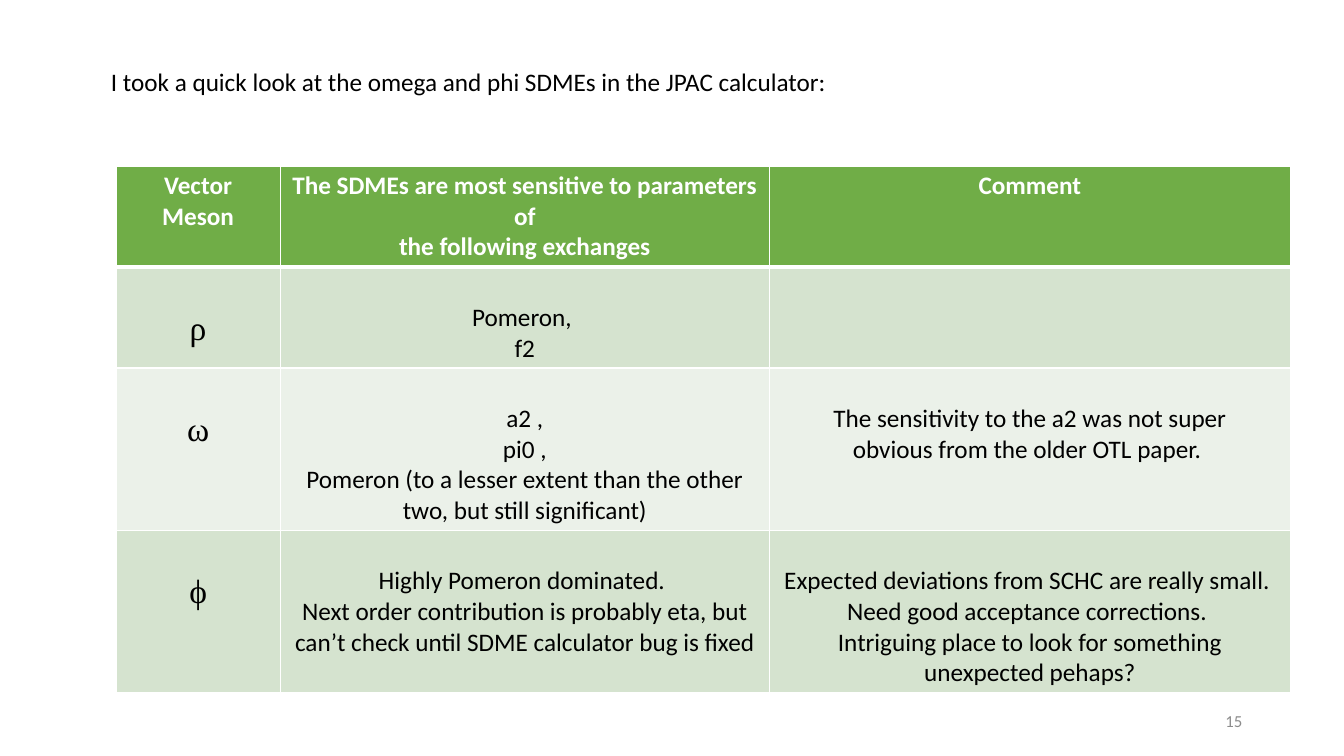
import pptx
import pptx.util
import pptx.dml.color
import pptx.enum.text
import pptx.oxml
import pptx.oxml.ns
import lxml.etree

INCH = pptx.util.Inches
ALIGN = pptx.enum.text.PP_ALIGN
ANCHOR = pptx.enum.text.MSO_ANCHOR

COLOURS = {
    "header": "70AD47",
    "band_dark": "D5E3CF",
    "band_light": "EBF1E9",
    "rule": "FFFFFF",
    "header_text": "FFFFFF",
    "text": "000000",
    "page_number": "8C8C8C",
}
BODY_FONT, SYMBOL_FONT = "Calibri", "Times New Roman"

COLUMN_WIDTHS = [1.63, 4.85, 5.17]
ROW_HEIGHTS = [1.0, 1.0, 1.6, 1.6]
CELL_PAD = 0.04
BODY_DROP, SYMBOL_DROP = 0.35, 0.43  # space above the text of body rows

HEADINGS = [
    "Vector Meson",
    "The SDMEs are most sensitive to parameters of\nthe following exchanges",
    "Comment",
]
MESONS = [
    ["ρ", "Pomeron, \nf2", ""],
    ["ω",
     "a2 ,\npi0 ,\nPomeron (to a lesser extent than the other two, "
     "but still significant)",
     " The sensitivity to the a2 was not super \n"
     "obvious from the older OTL paper. "],
    ["ϕ",
     "Highly Pomeron dominated. \nNext order contribution is probably eta, "
     "but can’t check until SDME calculator bug is fixed",
     "Expected deviations from SCHC are really small. \n"
     "Need good acceptance corrections. \n"
     "Intriguing place to look for something unexpected pehaps?"],
]


def rgb(name):
    return pptx.dml.color.RGBColor.from_string(COLOURS[name])


def write(frame, text, size=18, font=BODY_FONT, colour="text", bold=False,
          align=ALIGN.LEFT):
    """Fill a text frame, one paragraph per line of text."""
    for index, line in enumerate(text.split("\n")):
        paragraph = frame.paragraphs[0] if index == 0 else frame.add_paragraph()
        paragraph.alignment = align
        run = paragraph.add_run()
        run.text = line
        run.font.size = pptx.util.Pt(size)
        run.font.name = font
        run.font.bold = bold
        run.font.color.rgb = rgb(colour)


def rule_cell(cell, widths):
    """Draw the cell borders; widths maps a side tag to points."""
    properties = cell._tc.get_or_add_tcPr()
    for index, (side, width) in enumerate(widths.items()):
        border = lxml.etree.Element(
            pptx.oxml.ns.qn("a:" + side), w=str(pptx.util.Pt(width)))
        fill = lxml.etree.SubElement(border, pptx.oxml.ns.qn("a:solidFill"))
        lxml.etree.SubElement(
            fill, pptx.oxml.ns.qn("a:srgbClr"), val=COLOURS["rule"])
        properties.insert(index, border)


def add_lead_sentence(slide, left, top, width, height):
    lead = slide.shapes.title
    lead.left, lead.top = INCH(left), INCH(top)
    lead.width, lead.height = INCH(width), INCH(height)
    frame = lead.text_frame
    frame.auto_size = pptx.enum.text.MSO_AUTO_SIZE.NONE
    frame.word_wrap = False
    frame.vertical_anchor = ANCHOR.TOP
    write(frame, "I took a quick look at the omega and phi SDMEs "
                 "in the JPAC calculator:")


def add_meson_table(slide, left, top):
    rows = [HEADINGS] + MESONS
    table = slide.shapes.add_table(
        len(rows), len(HEADINGS), INCH(left), INCH(top),
        INCH(sum(COLUMN_WIDTHS)), INCH(sum(ROW_HEIGHTS))).table
    table.horz_banding = False
    for column, width in zip(table.columns, COLUMN_WIDTHS):
        column.width = INCH(width)
    for row, height in zip(table.rows, ROW_HEIGHTS):
        row.height = INCH(height)

    for r, texts in enumerate(rows):
        heading = r == 0
        band = "header" if heading else "band_dark" if r % 2 else "band_light"
        for c, text in enumerate(texts):
            symbol = c == 0 and not heading
            drop = SYMBOL_DROP if symbol else BODY_DROP
            cell = table.cell(r, c)
            cell.margin_top = INCH(CELL_PAD if heading else drop)
            cell.margin_bottom = INCH(CELL_PAD)
            cell.vertical_anchor = ANCHOR.TOP
            cell.fill.solid()
            cell.fill.fore_color.rgb = rgb(band)
            rule_cell(cell, {"lnL": 1, "lnR": 1, "lnT": 3 if r == 1 else 1,
                             "lnB": 3 if heading else 1})
            if text:
                write(cell.text_frame, text,
                      size=24 if symbol else 18,
                      font=SYMBOL_FONT if symbol else BODY_FONT,
                      colour="header_text" if heading else "text",
                      bold=heading, align=ALIGN.CENTER)


def add_page_number(slide, left, top, width, height):
    frame = slide.shapes.add_textbox(
        INCH(left), INCH(top), INCH(width), INCH(height)).text_frame
    frame.word_wrap = True
    frame.vertical_anchor = ANCHOR.MIDDLE
    write(frame, "15", size=12, colour="page_number", align=ALIGN.RIGHT)


def main():
    deck = pptx.Presentation()
    deck.slide_width, deck.slide_height = INCH(13.33), INCH(7.5)
    slide = deck.slides.add_slide(deck.slide_layouts[5])  # title only
    add_lead_sentence(slide, 1, 0.61, 7.31, 0.4)
    add_meson_table(slide, 1.15, 1.65)
    add_page_number(slide, 9.42, 6.95, 3, 0.4)
    deck.save("out.pptx")


if __name__ == "__main__":
    main()
